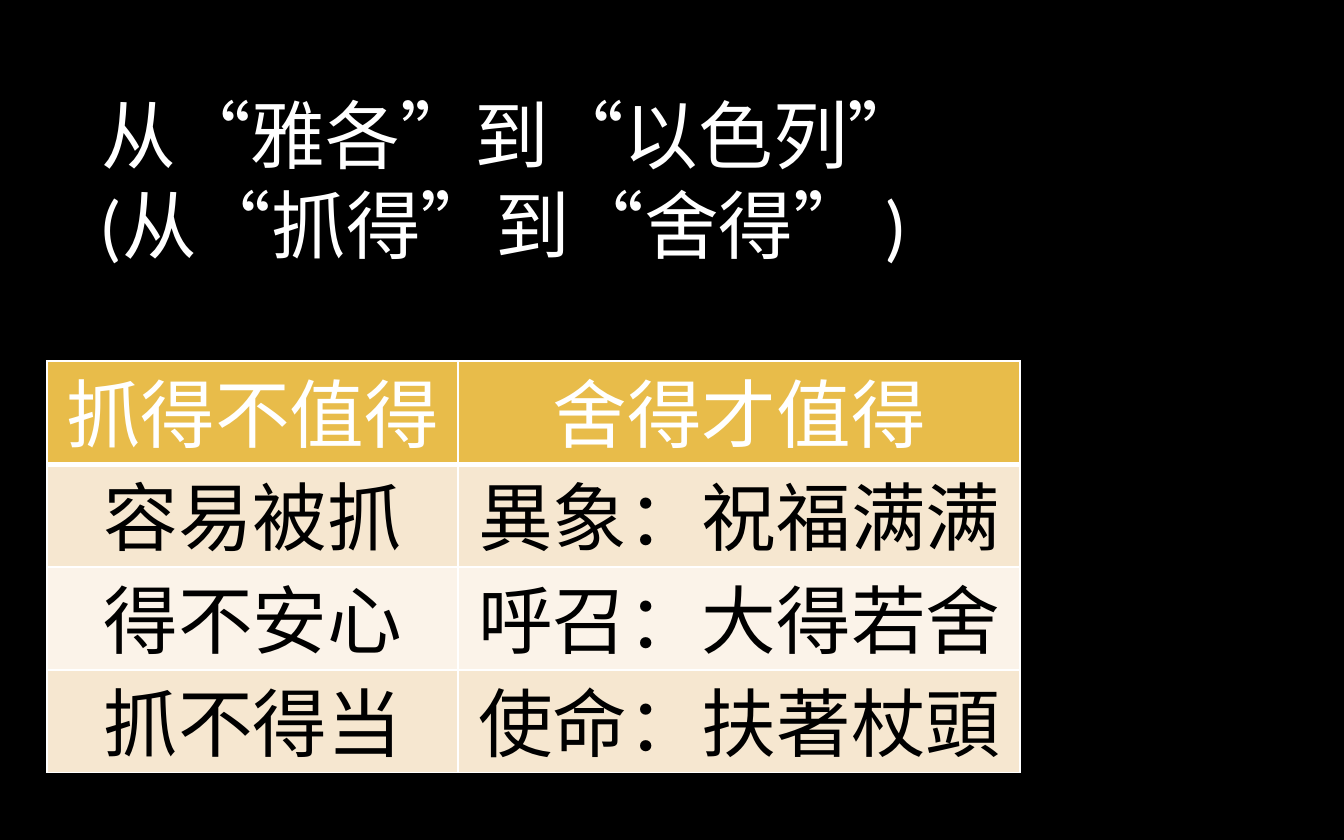
from dataclasses import dataclass

from lxml import etree
from pptx import Presentation
from pptx.dml.color import RGBColor
from pptx.enum.text import MSO_ANCHOR, PP_ALIGN
from pptx.oxml.ns import qn
from pptx.util import Emu, Inches, Pt

CENTER = PP_ALIGN.CENTER
TOP = MSO_ANCHOR.TOP
BOTTOM = MSO_ANCHOR.BOTTOM
TITLE_ONLY = 5


@dataclass(frozen=True)
class Theme:
    """Colours, fonts and type sizes of the slide."""

    background: str = "000000"
    light: str = "FFFFFF"
    dark: str = "000000"
    header: str = "E8BC4A"
    bands: tuple = ("F6E7D0", "FBF3E9")
    title_font: str = "Calibri"
    chinese_font: str = "Noto Sans CJK SC"
    size: int = 40
    title_spacing: int = 48
    table_spacing: int = 46
    rule: int = 1
    header_rule: int = 3


THEME = Theme()
TITLE_LINES = ("从“雅各”到“以色列”", "(从“抓得”到“舍得” ) ")
TABLE_ROWS = (
    ("抓得不值得", "舍得才值得"),
    ("容易被抓", "異象：祝福满满"),
    ("得不安心", "呼召：大得若舍"),
    ("抓不得当", "使命：扶著杖頭"),
)
COLUMN_SHARES = (3.06 / 7.24, 4.18 / 7.24)


def write_line(paragraph, text, font_name, color, spacing):
    """Write one centred run of Chinese text into a paragraph."""
    paragraph.alignment = CENTER
    paragraph.line_spacing = Pt(spacing)
    paragraph.space_before = Pt(0)
    run = paragraph.add_run()
    run.text = text
    run.font.name = font_name
    run.font.size = Pt(THEME.size)
    run.font.color.rgb = RGBColor.from_string(color)
    properties = run.font._element
    properties.set("lang", "zh-CN")
    east_asian = etree.Element(qn("a:ea"), typeface=THEME.chinese_font)
    properties.find(qn("a:latin")).addnext(east_asian)


def set_borders(cell, bottom_width):
    """Draw light rules on all four sides of a cell."""
    properties = cell._tc.get_or_add_tcPr()
    for side in "LRTB":
        width = bottom_width if side == "B" else THEME.rule
        line = etree.SubElement(properties, qn(f"a:ln{side}"), w=str(Pt(width)))
        fill = etree.SubElement(line, qn("a:solidFill"))
        etree.SubElement(fill, qn("a:srgbClr"), val=THEME.light)


def place_title(slide, box):
    """Place the two-line title in the given box."""
    title = slide.shapes.title
    title.left, title.top, title.width, title.height = box
    frame = title.text_frame
    frame.word_wrap = True
    frame.vertical_anchor = TOP
    frame.margin_top = Inches(0.1)
    for index, text in enumerate(TITLE_LINES):
        paragraph = frame.add_paragraph() if index else frame.paragraphs[0]
        write_line(paragraph, text, THEME.title_font, THEME.light,
                   THEME.title_spacing)


def place_table(slide, box):
    """Place the comparison table with equal rows in the given box."""
    table = slide.shapes.add_table(
        len(TABLE_ROWS), len(COLUMN_SHARES), *box).table
    for column, share in zip(table.columns, COLUMN_SHARES):
        column.width = Emu(int(box[2] * share))
    for row_index, texts in enumerate(TABLE_ROWS):
        is_header = row_index == 0
        fill = THEME.header if is_header else THEME.bands[(row_index - 1) % 2]
        color = THEME.light if is_header else THEME.dark
        bottom_width = THEME.header_rule if is_header else THEME.rule
        for column_index, text in enumerate(texts):
            cell = table.cell(row_index, column_index)
            set_borders(cell, bottom_width)
            cell.fill.solid()
            cell.fill.fore_color.rgb = RGBColor.from_string(fill)
            cell.vertical_anchor = BOTTOM
            cell.margin_top = cell.margin_bottom = 0
            write_line(cell.text_frame.paragraphs[0], text,
                       THEME.chinese_font, color, THEME.table_spacing)


def main():
    """Build and save the presentation."""
    presentation = Presentation()
    width = presentation.slide_width = Inches(10)
    height = presentation.slide_height = Inches(6.25)
    slide = presentation.slides.add_slide(
        presentation.slide_layouts[TITLE_ONLY])
    background = slide.background.fill
    background.solid()
    background.fore_color.rgb = RGBColor.from_string(THEME.background)

    def share_box(left, top, across, down):
        """Turn shares of the slide's size into a box."""
        return (int(width * left), int(height * top),
                int(width * across), int(height * down))

    place_title(slide, share_box(0.017, 0.09, 0.728, 0.34))
    place_table(slide, share_box(0.035, 0.43, 0.724, 0.49))
    presentation.save("out.pptx")


if __name__ == "__main__":
    main()
